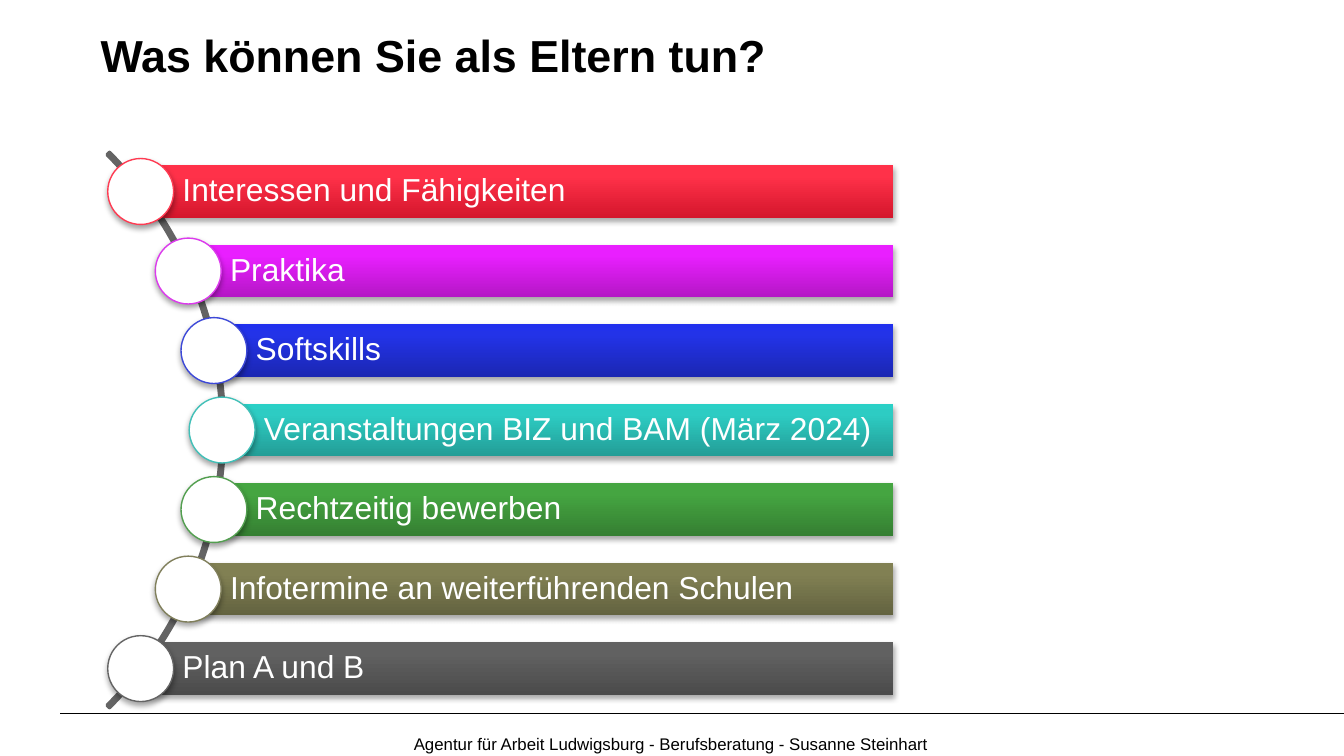
import copy
import math

import pptx
import pptx.dml.color
import pptx.enum.shapes
import pptx.enum.text
import pptx.oxml
import pptx.oxml.ns
import pptx.util

Pt = pptx.util.Pt
RGB = pptx.dml.color.RGBColor
SHAPE = pptx.enum.shapes.MSO_SHAPE
ANCHOR = pptx.enum.text.MSO_ANCHOR
qn = pptx.oxml.ns.qn

BLACK = RGB(0, 0, 0)
WHITE = RGB(255, 255, 255)
GREY = RGB(0x64, 0x64, 0x64)
FONT = "Arial"

# Content: text, gradient from bottom to top, circle outline
TITLE = "Was können Sie als Eltern tun?"
FOOTER = "Agentur für Arbeit Ludwigsburg - Berufsberatung - Susanne Steinhart"
TIPS = [
    ("Interessen und Fähigkeiten", ("D4162C", "FF3149", "FF334B"), "FF3B52"),
    ("Praktika", ("B417C5", "E91FFF", "E920FF"), "DC3AED"),
    ("Softskills", ("1B27B3", "2333E8", "2030ED"), "3C48D8"),
    ("Veranstaltungen BIZ und BAM (März 2024)", ("239D96", "2DCCC3", "2AD0C6"), "41C0B8"),
    ("Rechtzeitig bewerben", ("357F32", "45A541", "44A840"), "529F4F"),
    ("Infotermine an weiterführenden Schulen", ("636340", "818053", "838253"), "807F5B"),
    ("Plan A und B", ("4B4B4B", "616161", "616161"), "646464"),
]
STOPS = (0, 0.8, 1)

# Geometry in points
ARC_X, ARC_Y, ARC_SIZE = -90, 230.4, 420.5
RADIUS = 209
PITCH = 42.6
BAR_RIGHT, BAR_H = 478.6, 28.2
CIRCLE = 35.3

SHADOW = (
    '<a:effectLst xmlns:a="http://schemas.openxmlformats.org/drawingml/2006/main">'
    '<a:outerShdw blurRad="39400" dist="22900" dir="5400000" rotWithShape="0">'
    '<a:srgbClr val="000000"><a:alpha val="35000"/></a:srgbClr>'
    '</a:outerShdw></a:effectLst>'
)


def add_shape(kind, x, y, w, h):
    sp = slide.shapes.add_shape(kind, Pt(x), Pt(y), Pt(w), Pt(h))
    sp.shadow.inherit = False
    return sp


def add_shadow(sp):
    spPr = sp._element.spPr
    spPr.replace(spPr.find(qn("a:effectLst")), pptx.oxml.parse_xml(SHADOW))


def fill_gradient(sp, colors):
    sp.fill.gradient()
    sp.fill.gradient_angle = 90
    stops = sp._element.spPr.find(".//" + qn("a:gsLst"))
    stops.append(copy.deepcopy(stops[-1]))
    for stop, position, color in zip(sp.fill.gradient_stops, STOPS, colors):
        stop.position = position
        stop.color.rgb = RGB.from_string(color)


def write(tf, text, size, color, bold=False):
    tf.word_wrap = True
    p = tf.paragraphs[0]
    p.alignment = pptx.enum.text.PP_ALIGN.LEFT
    r = p.add_run()
    r.text = text
    r.font.name, r.font.size, r.font.bold = FONT, Pt(size), bold
    r.font.color.rgb = color
    return p


def add_text(x, y, w, h, text, size, bold=False):
    sp = slide.shapes.add_textbox(Pt(x), Pt(y), Pt(w), Pt(h))
    write(sp.text_frame, text, size, BLACK, bold)


prs = pptx.Presentation()
prs.slide_width, prs.slide_height = Pt(720), Pt(405)
slide = prs.slides.add_slide(prs.slide_layouts[6])

# Footer rule and title
rule = slide.shapes.add_connector(
    pptx.enum.shapes.MSO_CONNECTOR.STRAIGHT, Pt(32.4), Pt(382.5), Pt(720), Pt(382.5))
rule.line.color.rgb = BLACK
rule.line.width = Pt(0.5)
pptx.oxml.ns  # namespace map used by qn
rule._element.spPr.append(pptx.oxml.parse_xml(
    '<a:effectLst xmlns:a="http://schemas.openxmlformats.org/drawingml/2006/main"/>'))
add_text(46.8, 11.5, 648, 67.7, TITLE, 24, bold=True)

# Arc behind the list
arc = add_shape(SHAPE.BLOCK_ARC, ARC_X - ARC_SIZE / 2, ARC_Y - ARC_SIZE / 2, ARC_SIZE, ARC_SIZE)
for i, value in enumerate((189, 27, 0.004)):
    arc.adjustments[i] = value
arc.fill.solid()
arc.fill.fore_color.rgb = GREY
arc.line.color.rgb = GREY
arc.line.width = Pt(2)

# Bars start on the arc, each with a circle on its left end
for i, (text, colors, outline) in enumerate(TIPS):
    dy = (i - (len(TIPS) - 1) / 2) * PITCH
    x = ARC_X + math.sqrt(RADIUS ** 2 - dy ** 2)
    y = ARC_Y + dy

    bar = add_shape(SHAPE.RECTANGLE, x, y - BAR_H / 2, BAR_RIGHT - x, BAR_H)
    fill_gradient(bar, colors)
    bar.line.fill.background()
    add_shadow(bar)
    tf = bar.text_frame
    tf.vertical_anchor = ANCHOR.MIDDLE
    tf.margin_left = Pt(22.4)
    tf.margin_top = tf.margin_right = tf.margin_bottom = Pt(3.4)
    write(tf, text, 17, WHITE).line_spacing = 0.9

    circle = add_shape(SHAPE.OVAL, x - CIRCLE / 2, y - CIRCLE / 2, CIRCLE, CIRCLE)
    circle.fill.solid()
    circle.fill.fore_color.rgb = WHITE
    circle.line.color.rgb = RGB.from_string(outline)
    circle.line.width = Pt(0.75)
    add_shadow(circle)

# Footer
add_text(214.6, 389.5, 443.5, 15.1, FOOTER, 9)

prs.save("out.pptx")
